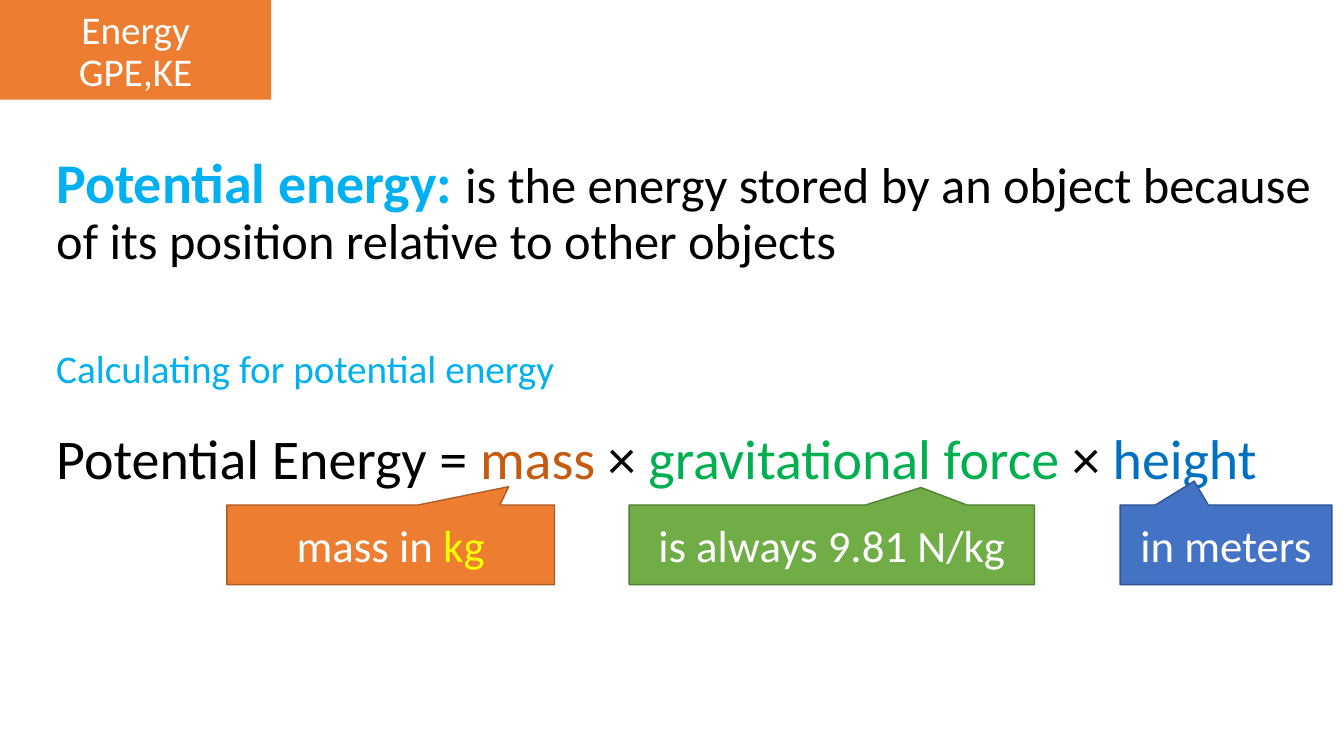
from dataclasses import dataclass

from pptx import Presentation
from pptx.dml.color import RGBColor
from pptx.enum.shapes import MSO_SHAPE
from pptx.enum.text import MSO_ANCHOR, PP_ALIGN
from pptx.util import Inches, Pt

RECTANGLE = MSO_SHAPE.RECTANGLE
CALLOUT = MSO_SHAPE.RECTANGULAR_CALLOUT
TOP, MIDDLE, BOTTOM = MSO_ANCHOR.TOP, MSO_ANCHOR.MIDDLE, MSO_ANCHOR.BOTTOM
LEFT, CENTER = PP_ALIGN.LEFT, PP_ALIGN.CENTER


@dataclass(frozen=True)
class Theme:
    """Font, type sizes and colours of the slide."""

    font: str = "Calibri"
    formula: int = 40
    body: int = 36
    callout: int = 32
    small: int = 28
    white: str = "FFFFFF"
    black: str = "000000"
    yellow: str = "FFFF00"
    heading: str = "00B0F0"
    mass: str = "C55A11"
    gravity: str = "00B050"
    height: str = "0070C0"
    orange: str = "ED7D31"
    orange_edge: str = "AF5C24"
    green: str = "70AD47"
    green_edge: str = "538035"
    blue: str = "4472C4"
    blue_edge: str = "325491"


THEME = Theme()


def color(value):
    """Return the colour for a hex value."""
    return RGBColor.from_string(value)


def write_paragraph(paragraph, runs, align=LEFT, line_spacing=1.0, space_before=0):
    """Fill a paragraph with (text, size, colour, bold) runs."""
    paragraph.alignment = align
    paragraph.line_spacing = line_spacing
    paragraph.space_before = Pt(space_before)
    for text, size, hue, bold in runs:
        run = paragraph.add_run()
        run.text = text
        run.font.name = THEME.font
        run.font.size = Pt(size)
        run.font.bold = bold
        run.font.color.rgb = color(hue)


def next_paragraph(text_frame, index):
    """Return the first paragraph for index zero and a new one otherwise."""
    return text_frame.add_paragraph() if index else text_frame.paragraphs[0]


def add_definition(slide):
    """Add the definition, the subheading and the formula."""
    box = slide.shapes.add_textbox(Inches(0.46), Inches(1.49), Inches(12.66), Inches(5.68))
    text_frame = box.text_frame
    text_frame.word_wrap = True
    text_frame.vertical_anchor = TOP
    definition = [
        ("Potential energy: ", THEME.formula, THEME.heading, True),
        ("is the energy stored by an object because of its position relative to other objects",
         THEME.body, THEME.black, False),
    ]
    subheading = [("Calculating for potential energy", THEME.small, THEME.heading, False)]
    formula = [
        (text, THEME.formula, hue, False)
        for text, hue in (
            ("Potential Energy = ", THEME.black),
            ("mass", THEME.mass),
            (" × ", THEME.black),
            ("gravitational force ", THEME.gravity),
            ("× ", THEME.black),
            ("height", THEME.height),
        )
    ]
    blocks = ((definition, 0), (subheading, 57), (formula, 28))
    for index, (runs, space_before) in enumerate(blocks):
        write_paragraph(next_paragraph(text_frame, index), runs,
                        line_spacing=0.9, space_before=space_before)


def add_filled_shape(slide, kind, left, top, width, height, fill, anchor):
    """Add a shape with a plain fill and no shadow."""
    shape = slide.shapes.add_shape(kind, Inches(left), Inches(top), Inches(width), Inches(height))
    shape.shadow.inherit = False
    shape.fill.solid()
    shape.fill.fore_color.rgb = color(fill)
    shape.text_frame.word_wrap = True
    shape.text_frame.vertical_anchor = anchor
    return shape


def add_callout(slide, left, width, tip, fill, edge, parts):
    """Add a callout under the formula that points up at one of its terms."""
    shape = add_filled_shape(slide, CALLOUT, left, 5.01, width, 0.79, fill, MIDDLE)
    shape.line.color.rgb = color(edge)
    shape.line.width = Pt(1)
    shape.adjustments[0], shape.adjustments[1] = tip
    runs = [(text, THEME.callout, hue, False) for text, hue in parts]
    write_paragraph(shape.text_frame.paragraphs[0], runs, CENTER)


def add_topic_tag(slide, lines):
    """Add the topic tag in the top left corner."""
    shape = add_filled_shape(slide, RECTANGLE, 0, -0.02, 2.69, 1.01, THEME.orange, BOTTOM)
    shape.line.fill.background()
    for index, text in enumerate(lines):
        write_paragraph(next_paragraph(shape.text_frame, index),
                        [(text, THEME.small, THEME.white, False)], CENTER, 0.9)


def main():
    """Build the slide and save it."""
    presentation = Presentation()
    presentation.slide_width = Inches(13.33)
    presentation.slide_height = Inches(7.5)
    slide = presentation.slides.add_slide(presentation.slide_layouts[6])
    add_definition(slide)
    add_callout(slide, 2.25, 3.25, (0.36, -0.73), THEME.orange, THEME.orange_edge,
                [("mass in ", THEME.white), ("kg", THEME.yellow)])
    add_callout(slide, 6.24, 4.02, (0.22, -0.72), THEME.green, THEME.green_edge,
                [("is always 9.81 N/kg", THEME.white)])
    add_callout(slide, 11.11, 2.1, (-0.15, -0.8), THEME.blue, THEME.blue_edge,
                [("in meters", THEME.white)])
    add_topic_tag(slide, ("Energy", "GPE,KE"))
    presentation.save("out.pptx")


if __name__ == "__main__":
    main()
